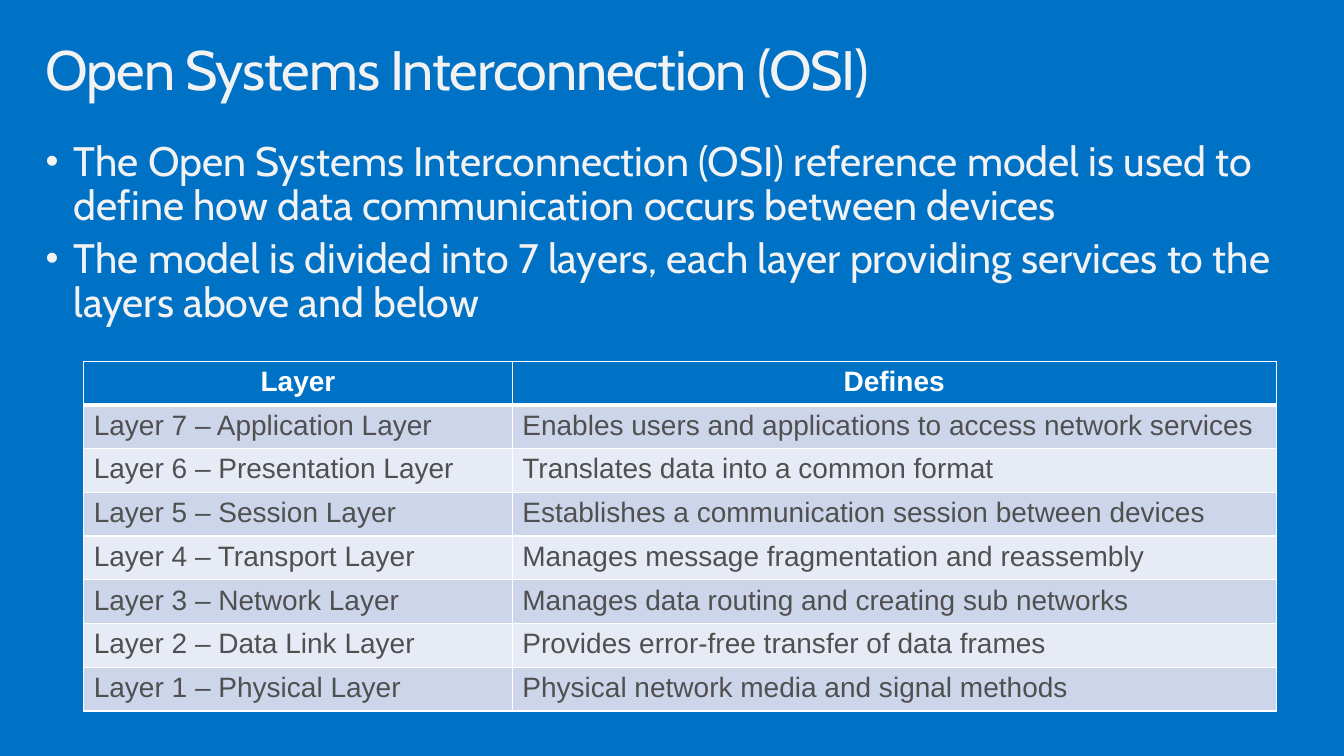
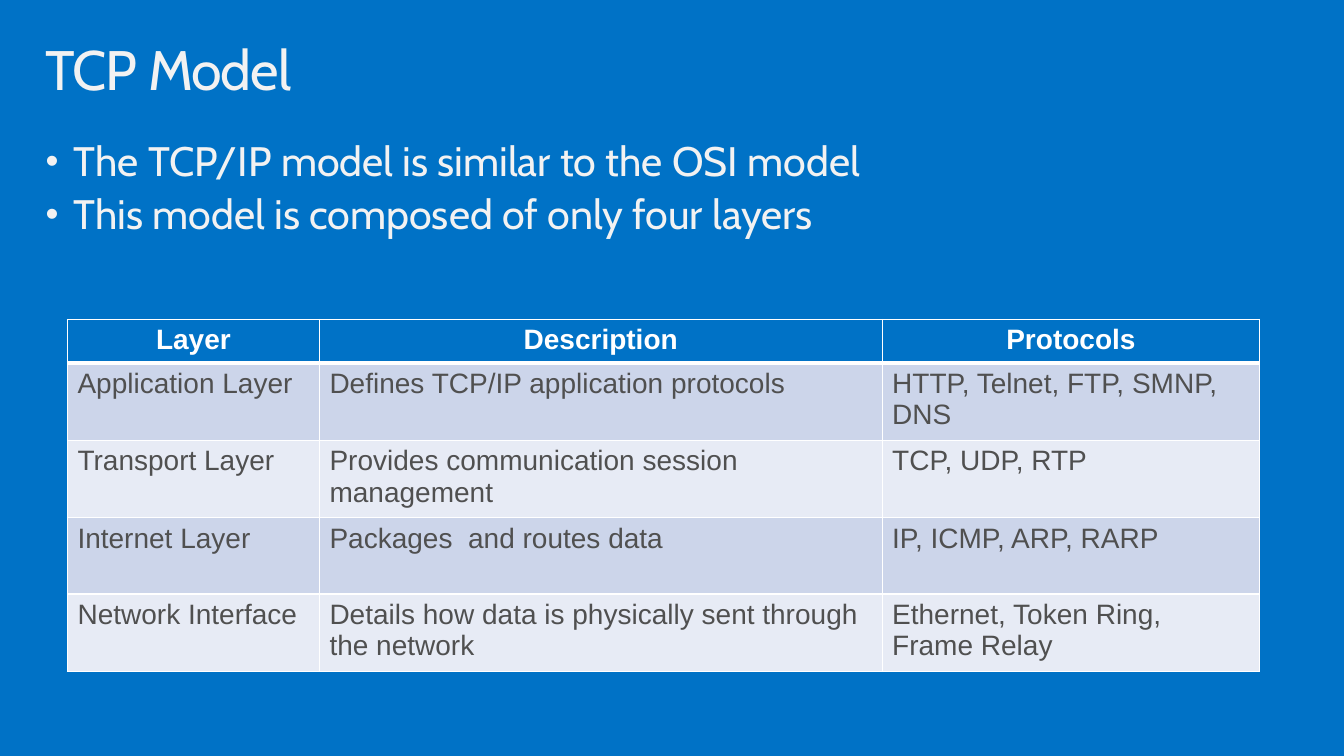
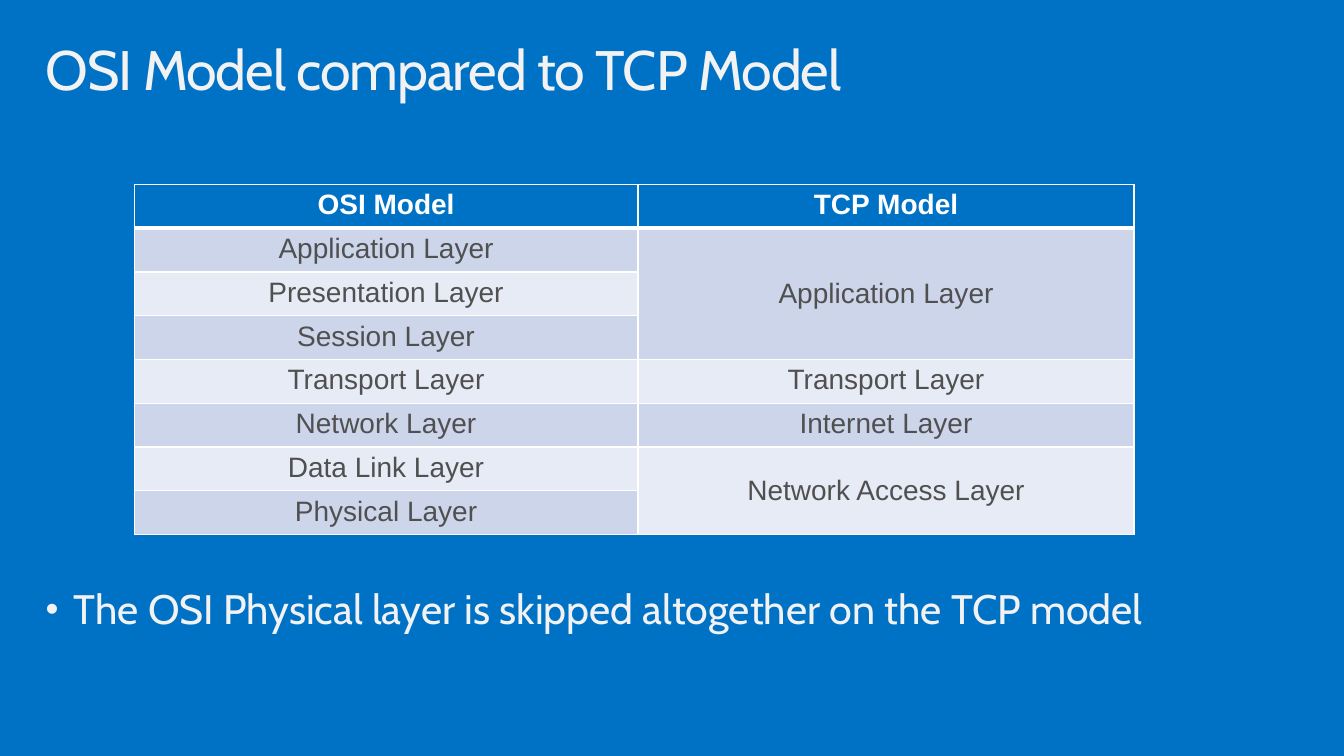
import lxml.etree
import pptx
import pptx.dml.color
import pptx.enum.text
import pptx.oxml.ns
import pptx.util

Cm = pptx.util.Cm
Pt = pptx.util.Pt
RGBColor = pptx.dml.color.RGBColor
PP_ALIGN = pptx.enum.text.PP_ALIGN
MSO_ANCHOR = pptx.enum.text.MSO_ANCHOR
MSO_AUTO_SIZE = pptx.enum.text.MSO_AUTO_SIZE
qn = pptx.oxml.ns.qn

BLUE = RGBColor(0x00, 0x72, 0xC6)
OFF_WHITE = RGBColor(0xF2, 0xF2, 0xF2)
WHITE = RGBColor(0xFF, 0xFF, 0xFF)
GREY = RGBColor(0x50, 0x50, 0x50)
DARK_BAND = RGBColor(0xCC, 0xD5, 0xEA)
LIGHT_BAND = RGBColor(0xE7, 0xEB, 0xF5)

ROW = 1.04
TALL_ROW = 1.83

# Lengths in cm; None marks a cell that is merged into the one above it.
SLIDES = [
    {
        "title": "Open Systems Interconnection (OSI)",
        "bullets": [
            "The Open Systems Interconnection (OSI) reference model is used to "
            "define how data communication occurs between devices",
            "The model is divided into 7 layers, each layer providing services "
            "to the layers above and below",
        ],
        "bullets_top": 3.3,
        "bullets_height": 5.28,
        "corner": (2.11, 9.1),
        "columns": [10.8, 19.25],
        "row_heights": [ROW] * 8,
        "centred": False,
        "rows": [
            ("Layer", "Defines"),
            ("Layer 7 – Application Layer", "Enables users and applications to access network services"),
            ("Layer 6 – Presentation Layer", "Translates data into a common format"),
            ("Layer 5 – Session Layer", "Establishes a communication session between devices"),
            ("Layer 4 – Transport Layer", "Manages message fragmentation and reassembly"),
            ("Layer 3 – Network Layer", "Manages data routing and creating sub networks"),
            ("Layer 2 – Data Link Layer", "Provides error-free transfer of data frames"),
            ("Layer 1 – Physical Layer", "Physical network media and signal methods"),
        ],
    },
    {
        "title": "TCP Model",
        "bullets": [
            "The TCP/IP model is similar to the OSI model",
            "This model is composed of only four layers",
        ],
        "bullets_top": 3.3,
        "bullets_height": 3.02,
        "corner": (1.7, 8.05),
        "columns": [6.35, 14.18, 9.52],
        "row_heights": [ROW, TALL_ROW, TALL_ROW, 1.92, TALL_ROW],
        "centred": False,
        "rows": [
            ("Layer", "Description", "Protocols"),
            ("Application Layer", "Defines TCP/IP application protocols", "HTTP, Telnet, FTP, SMNP, DNS"),
            ("Transport Layer", "Provides communication session management", "TCP, UDP, RTP"),
            ("Internet Layer", "Packages  and routes data", "IP, ICMP, ARP, RARP"),
            ("Network Interface", "Details how data is physically sent through the network",
             "Ethernet, Token Ring, Frame Relay"),
        ],
    },
    {
        "title": "OSI Model compared to TCP Model",
        "bullets": ["The OSI Physical layer is skipped altogether on the TCP model"],
        "bullets_top": 14.6,
        "bullets_height": 1.65,
        "corner": (3.38, 4.65),
        "columns": [12.7, 12.5],
        "row_heights": [ROW] * 8,
        "centred": True,
        "rows": [
            ("OSI Model", "TCP Model"),
            ("Application Layer", "Application Layer"),
            ("Presentation Layer", None),
            ("Session Layer", None),
            ("Transport Layer", "Transport Layer"),
            ("Network Layer", "Internet Layer"),
            ("Data Link Layer", "Network Access Layer"),
            ("Physical Layer", None),
        ],
    },
]


def style_text(paragraph, font_name, size, colour, bold=False):
    paragraph.font.name = font_name
    paragraph.font.size = Pt(size)
    paragraph.font.color.rgb = colour
    paragraph.font.bold = bold


def add_borders(cell, row_index):
    """White cell borders, with a heavier rule under the header row."""
    heavy_side = {0: "lnB", 1: "lnT"}.get(row_index)
    properties = cell._tc.get_or_add_tcPr()
    for side in ("lnL", "lnR", "lnT", "lnB"):
        width = Pt(3 if side == heavy_side else 1)
        line = lxml.etree.SubElement(properties, qn(f"a:{side}"), w=str(width))
        fill = lxml.etree.SubElement(line, qn("a:solidFill"))
        lxml.etree.SubElement(fill, qn("a:srgbClr"), val=str(WHITE))


deck = pptx.Presentation()
deck.slide_width = Cm(33.87)
deck.slide_height = Cm(19.05)
backdrop = deck.slide_master.background.fill
backdrop.solid()
backdrop.fore_color.rgb = BLUE

for content in SLIDES:
    slide = deck.slides.add_slide(deck.slide_layouts[1])
    title, bullets = slide.placeholders
    title.text_frame.text = content["title"]
    bullets.text_frame.text = "\n".join(content["bullets"])

    for holder, top, height, size, fit in (
        (title, 0.81, 2.49, 39.7, MSO_AUTO_SIZE.NONE),
        (bullets, content["bullets_top"], content["bullets_height"], 29.4,
         MSO_AUTO_SIZE.SHAPE_TO_FIT_TEXT),
    ):
        holder.left, holder.top = Cm(0.74), Cm(top)
        holder.width, holder.height = Cm(32.38), Cm(height)
        frame = holder.text_frame
        frame.auto_size = fit
        frame.vertical_anchor = MSO_ANCHOR.TOP
        frame.margin_left = frame.margin_right = Cm(0.41)
        frame.margin_top = frame.margin_bottom = Cm(0.25)
        for paragraph in frame.paragraphs:
            paragraph.alignment = PP_ALIGN.LEFT
            paragraph.line_spacing = 0.9
            if holder is bullets:
                properties = paragraph._p.get_or_add_pPr()
                properties.set("marL", str(Cm(0.71)))
                properties.set("indent", str(-Cm(0.71)))
                lxml.etree.SubElement(properties, qn("a:buSzPct"), val="90000")
                lxml.etree.SubElement(properties, qn("a:buChar"), char="•")
            style_text(paragraph, "Cabin", size, OFF_WHITE)
    title.text_frame.paragraphs[0].runs[0]._r.get_or_add_rPr().set("spc", "-80")

    rows, columns, heights = content["rows"], content["columns"], content["row_heights"]
    left, top = content["corner"]
    layers = slide.shapes.add_table(
        len(rows), len(columns), Cm(left), Cm(top), Cm(sum(columns)), Cm(sum(heights))
    ).table
    for column, width in zip(layers.columns, columns):
        column.width = Cm(width)
    for row, height in zip(layers.rows, heights):
        row.height = Cm(height)

    for r, texts in enumerate(rows):
        header = r == 0
        for c, text in enumerate(texts):
            cell = layers.cell(r, c)
            add_borders(cell, r)
            cell.fill.solid()
            cell.fill.fore_color.rgb = BLUE if header else DARK_BAND if r % 2 else LIGHT_BAND
            if text is None:
                continue
            cell.text = text
            paragraph = cell.text_frame.paragraphs[0]
            centred = header or content["centred"]
            paragraph.alignment = PP_ALIGN.CENTER if centred else PP_ALIGN.LEFT
            style_text(paragraph, "Arial", 20, WHITE if header else GREY, bold=header)
            last = r
            while last + 1 < len(rows) and rows[last + 1][c] is None:
                last += 1
            if last > r:
                cell.merge(layers.cell(last, c))
                cell.vertical_anchor = MSO_ANCHOR.MIDDLE

deck.save("out.pptx")
